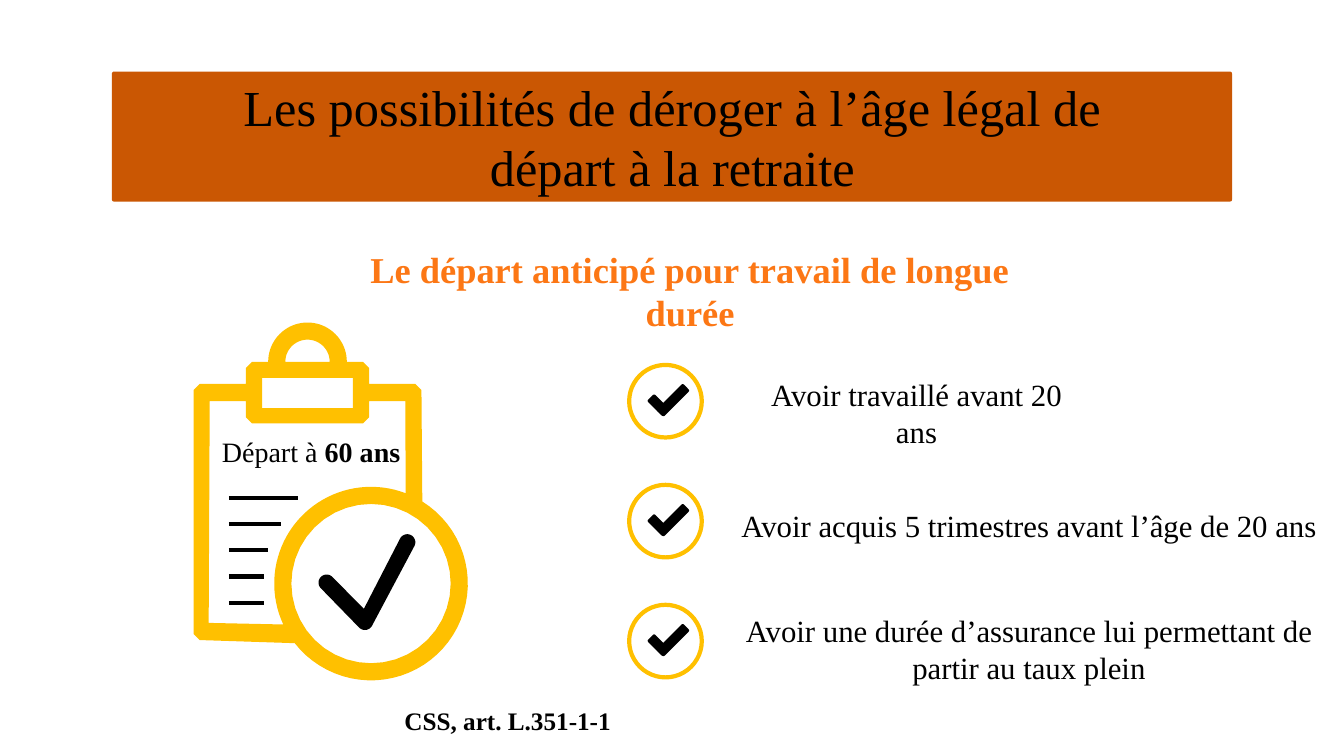
from math import cos, radians, sin

from lxml.etree import SubElement
from pptx import Presentation
from pptx.dml.color import RGBColor
from pptx.enum.shapes import MSO_CONNECTOR, MSO_SHAPE
from pptx.enum.text import MSO_ANCHOR, MSO_AUTO_SIZE, PP_ALIGN
from pptx.oxml.ns import qn
from pptx.util import Inches, Pt

COLORS = {
    "black": "000000",
    "white": "FFFFFF",
    "bar": "CA5703",
    "accent": "FC7715",
    "yellow": "FFC000",
}


def rgb(name):
    """Return the named colour."""
    return RGBColor.from_string(COLORS[name])


def place(sp, left, top, width, height):
    """Set the frame of a shape in inches."""
    sp.left, sp.top = Inches(left), Inches(top)
    sp.width, sp.height = Inches(width), Inches(height)


def arc(cx, cy, radius, start, end, steps=40):
    """Return points along an arc, with angles in degrees clockwise from the right."""
    angles = [radians(start + (end - start) * i / steps) for i in range(steps + 1)]
    return [(cx + radius * cos(a), cy + radius * sin(a)) for a in angles]


def write(tf, *texts, size=22, color="black", bold=False, bold_last=False):
    """Write centred runs in a wrapped text frame."""
    tf.word_wrap = True
    tf.auto_size = MSO_AUTO_SIZE.SHAPE_TO_FIT_TEXT
    tf.vertical_anchor = MSO_ANCHOR.TOP
    p = tf.paragraphs[0]
    p.alignment = PP_ALIGN.CENTER
    for i, text in enumerate(texts):
        r = p.add_run()
        r.text = text
        r.font.name = "Times New Roman"
        r.font.size = Pt(size)
        r.font.bold = bold or (bold_last and i == len(texts) - 1)
        r.font.color.rgb = rgb(color)


class Deck:
    """Hold the current slide and draw its elements in one style."""

    def __init__(self, s):
        """Keep the slide."""
        self.s = s

    def title(self, text, frame, **fmt):
        """Place and fill the title placeholder."""
        sp = self.s.shapes.title
        place(sp, *frame)
        write(sp.text_frame, text, **fmt)
        return sp

    def text(self, frame, *texts, **fmt):
        """Add a text box."""
        sp = self.s.shapes.add_textbox(*map(Inches, frame))
        write(sp.text_frame, *texts, **fmt)

    def paint(self, sp, fill, line=None):
        """Format the fill and outline of a shape."""
        sp.shadow.inherit = False
        sp.fill.solid()
        sp.fill.fore_color.rgb = rgb(fill)
        if line:
            sp.line.color.rgb = rgb(line)
            sp.line.width = Pt(3)
        else:
            sp.line.fill.background()
        return sp

    def shape(self, kind, frame, fill, line=None, rotation=0):
        """Add a preset shape."""
        sp = self.s.shapes.add_shape(kind, *map(Inches, frame))
        sp.rotation = rotation
        return self.paint(sp, fill, line)

    def outline(self, fill, *contours):
        """Add a freeform whose later contours are holes."""
        paths = [[(Inches(x), Inches(y)) for x, y in points] for points in contours]
        fb = self.s.shapes.build_freeform(*paths[0][0])
        for i, points in enumerate(paths):
            if i:
                fb.move_to(*points[0])
            fb.add_line_segments(points[1:], close=True)
        return self.paint(fb.convert_to_shape(), fill)

    def rule(self, left, y, length):
        """Add a horizontal line."""
        ends = map(Inches, (left, y, left + length, y))
        c = self.s.shapes.add_connector(MSO_CONNECTOR.STRAIGHT, *ends)
        c.line.color.rgb = rgb("black")
        c.line.width = Pt(3)
        SubElement(c.element.spPr, qn("a:effectLst"))

    def clipboard(self):
        """Draw the clipboard with its clip, seal and check mark."""
        seal, clip = (3.68, 5.79), (3.05, 3.59)
        silhouette = (
            arc(*seal, 0.96, -58, 142)
            + [(1.98, 6.35), (1.92, 6.29), (1.92, 3.87), (1.98, 3.81)]
            + [(2.44, 3.81), (2.44, 3.65), (2.5, 3.59)]
            + arc(*clip, 0.39, 180, 360)
            + [(3.6, 3.59), (3.66, 3.65), (3.66, 3.81), (4.12, 3.81), (4.18, 3.87)]
        )
        window = [(2.6, 3.75), (3.5, 3.75), (3.5, 4.05), (2.6, 4.05)]
        page = [
            (2.07, 6.18), (2.08, 3.98), (2.44, 3.98), (2.44, 4.14), (2.5, 4.2),
            (3.6, 4.2), (3.66, 4.14), (3.66, 3.98), (4.02, 3.98),
        ] + arc(*seal, 0.96, -69, -205)
        check = (
            arc(3.24, 5.78, 0.08, 135, 315)
            + [(3.61, 6.04)]
            + arc(4.04, 5.38, 0.08, 208, 388)
            + arc(3.62, 6.17, 0.08, 28, 135)
        )
        self.outline("black", check)
        self.outline("yellow", silhouette, arc(*clip, 0.22, 180, 360), window,
                     page, arc(*seal, 0.79, 0, 360))
        for i, length in enumerate((0.69, 0.52, 0.39, 0.35, 0.35)):
            self.rule(2.27, 4.94 + 0.26 * i, length)

    def tick(self, top):
        """Draw a check mark in a ring."""
        self.shape(MSO_SHAPE.OVAL, (6.24, top, 0.72, 0.72), "white", "yellow")
        bar = MSO_SHAPE.ROUNDED_RECTANGLE
        self.shape(bar, (6.42, top + 0.35, 0.22, 0.1), "black", rotation=45)
        self.shape(bar, (6.49, top + 0.3, 0.37, 0.1), "black", rotation=135)


def main():
    """Build the retirement slide."""
    prs = Presentation()
    prs.slide_width, prs.slide_height = Inches(13.33), Inches(7.5)
    deck = Deck(prs.slides.add_slide(prs.slide_layouts[5]))

    title = deck.title("Les possibilités de déroger à l’âge légal de départ à la retraite",
                       (1.67, 0.7, 10, 1.31), size=36)
    bar = deck.shape(MSO_SHAPE.ROUNDED_RECTANGLE, (1.11, 0.71, 11.11, 1.29), "bar")
    bar.adjustments[0] = 0.016
    title.element.addprevious(bar.element)

    deck.clipboard()
    deck.text((1.79, 4.26, 2.59, 1.04), "Départ à ", "60 ans", size=20, bold_last=True)

    conditions = [
        ((7.35, 3.68, 3.48, 0.47), "Avoir travaillé avant 20 ans"),
        ((7.23, 4.98, 5.95, 0.47), "Avoir acquis 5 trimestres avant l’âge de 20 ans"),
        ((7.23, 6.02, 5.95, 0.84),
         "Avoir une durée d’assurance lui permettant de partir au taux plein"),
    ]
    for i, (frame, text) in enumerate(conditions):
        deck.tick(3.62 + 1.19 * i)
        deck.text(frame, text)

    deck.text((3.05, 6.95, 3.97, 0.4), "CSS, art. L.351-1-1", size=18, bold=True)
    deck.text((3.35, 2.4, 6.99, 0.54), "Le départ anticipé pour travail de longue durée",
              size=26, color="accent", bold=True)
    prs.save("out.pptx")


if __name__ == "__main__":
    main()
